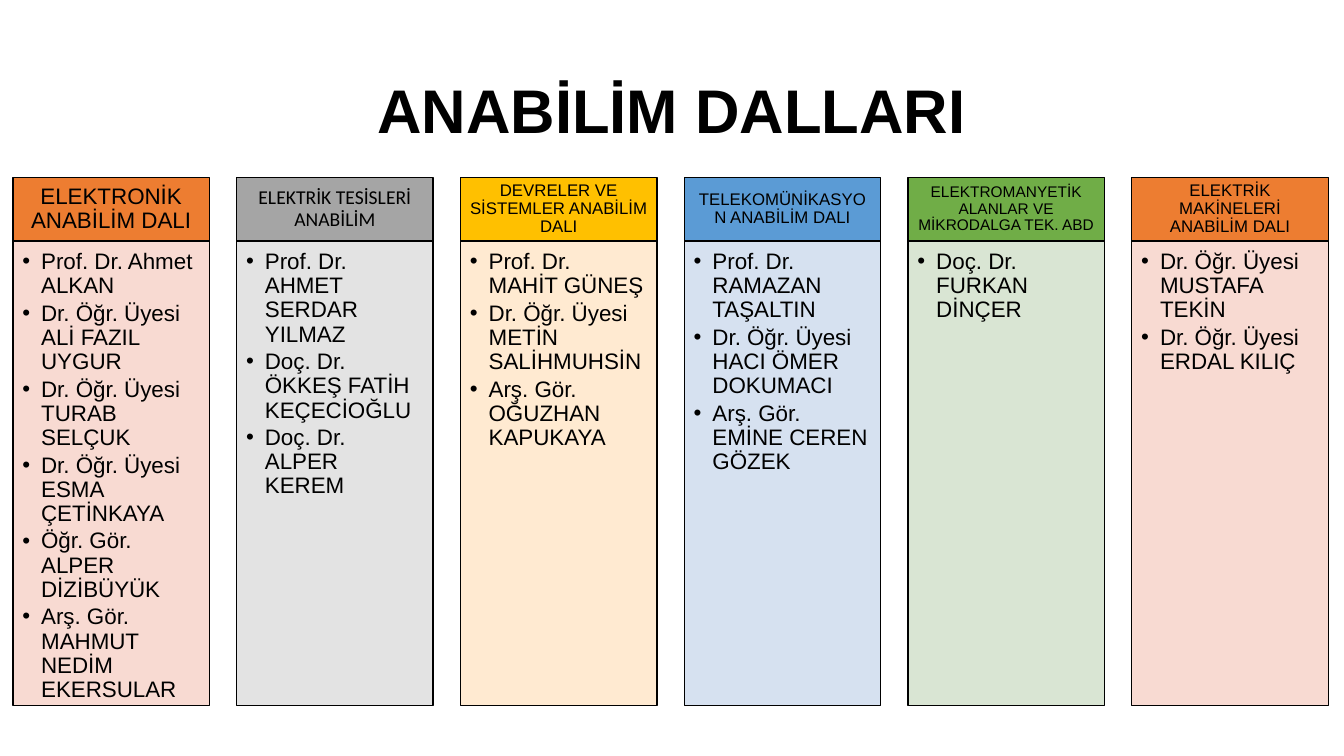
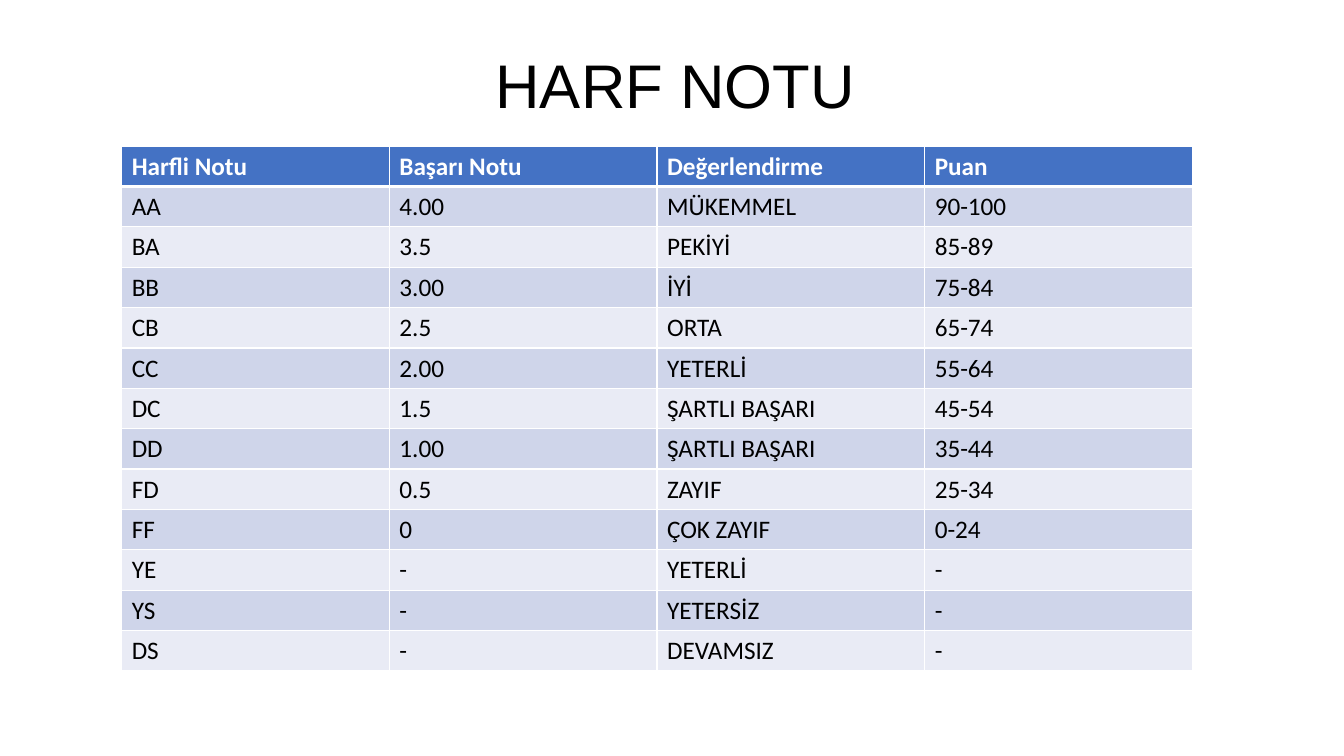
"""Build two slides: the department's divisions and the letter grade table."""
import pptx
import pptx.dml.color
import pptx.enum.shapes
import pptx.enum.text
import pptx.oxml
import pptx.oxml.ns
import pptx.util

Pt = pptx.util.Pt
ALIGN = pptx.enum.text.PP_ALIGN
ANCHOR = pptx.enum.text.MSO_ANCHOR
BLACK, WHITE = "000000", "FFFFFF"
NAMESPACE = pptx.oxml.ns.nsdecls("a")

TITLE_FRAME = {"word_wrap": True, "vertical_anchor": ANCHOR.MIDDLE}
CENTRED = {"alignment": ALIGN.CENTER, "line_spacing": 0.9}
BODY_FRAME = {"word_wrap": True, "vertical_anchor": ANCHOR.TOP, "margin_left": Pt(6.7),
              "margin_top": Pt(6.7), "margin_right": Pt(8.9), "margin_bottom": Pt(10)}
BODY_PARA = {"alignment": ALIGN.LEFT, "line_spacing": 0.9, "space_after": Pt(2.4)}

TITLES = [
    ("ANABİLİM DALLARI", True, (66, 28.8, 828, 104.4)),
    ("HARF NOTU", False, (86.4, 22.3, 792, 82)),
]

DIVISIONS = [
    ("ELEKTRONİK ANABİLİM DALI", "Arial", 16, "ED7D31", "F8D7CE", [
        "Prof. Dr. Ahmet ALKAN", "Dr. Öğr. Üyesi ALİ FAZIL UYGUR",
        "Dr. Öğr. Üyesi TURAB SELÇUK", "Dr. Öğr. Üyesi ESMA ÇETİNKAYA",
        "Öğr. Gör. ALPER DİZİBÜYÜK", "Arş. Gör. MAHMUT NEDİM EKERSULAR"]),
    ("ELEKTRİK TESİSLERİ ANABİLİM", "Calibri", 14, "A5A5A5", "E1E1E1", [
        "Prof. Dr. AHMET SERDAR YILMAZ", "Doç. Dr. ÖKKEŞ FATİH KEÇECİOĞLU",
        "Doç. Dr. ALPER KEREM"]),
    ("DEVRELER VE SİSTEMLER ANABİLİM DALI", "Arial", 12, "FFC000", "FFE8CC", [
        "Prof. Dr. MAHİT GÜNEŞ", "Dr. Öğr. Üyesi METİN SALİHMUHSİN",
        "Arş. Gör. OĞUZHAN KAPUKAYA"]),
    ("TELEKOMÜNİKASYON ANABİLİM DALI", "Arial", 12, "5B9BD5", "D2DEEF", [
        "Prof. Dr. RAMAZAN TAŞALTIN", "Dr. Öğr. Üyesi HACI ÖMER DOKUMACI",
        "Arş. Gör. EMİNE CEREN GÖZEK"]),
    ("ELEKTROMANYETİK ALANLAR VE MİKRODALGA TEK. ABD", "Arial", 11, "70AD47", "D5E3CF", [
        "Doç. Dr. FURKAN DİNÇER"]),
    ("ELEKTRİK MAKİNELERİ ANABİLİM DALI", "Arial", 12, "ED7D31", "F8D7CE", [
        "Dr. Öğr. Üyesi MUSTAFA TEKİN", "Dr. Öğr. Üyesi ERDAL KILIÇ"]),
]

GRADES = [
    ("Harfli Notu", "Başarı Notu", "Değerlendirme", "Puan"),
    ("AA", "4.00", "MÜKEMMEL", "90-100"),
    ("BA", "3.5", "PEKİYİ", "85-89"),
    ("BB", "3.00", "İYİ", "75-84"),
    ("CB", "2.5", "ORTA", "65-74"),
    ("CC", "2.00", "YETERLİ", "55-64"),
    ("DC", "1.5", "ŞARTLI BAŞARI", "45-54"),
    ("DD", "1.00", "ŞARTLI BAŞARI", "35-44"),
    ("FD", "0.5", "ZAYIF", "25-34"),
    ("FF", "0", "ÇOK ZAYIF", "0-24"),
    ("YE", "-", "YETERLİ", "-"),
    ("YS", "-", "YETERSİZ", "-"),
    ("DS", "-", "DEVAMSIZ", "-"),
]


def paint(target, value):
    """Give a fill or a font one solid colour."""
    if hasattr(target, "solid"):
        target.solid()
        target.fore_color.rgb = pptx.dml.color.RGBColor.from_string(value)
    else:
        target.color.rgb = pptx.dml.color.RGBColor.from_string(value)


def write(frame, lines, frame_format, para_format, font_format, ink=BLACK):
    """Fill a text frame with one formatted paragraph a line."""
    for name, value in frame_format.items():
        setattr(frame, name, value)
    for number, line in enumerate(lines):
        para = frame.add_paragraph() if number else frame.paragraphs[0]
        for name, value in para_format.items():
            setattr(para, name, value)
        span = para.add_run()
        span.text = line
        for name, value in font_format.items():
            setattr(span.font, name, value)
        paint(span.font, ink)


deck = pptx.Presentation()
deck.slide_width, deck.slide_height = Pt(960), Pt(540)

pages = []
for title, bold, place in TITLES:
    page = deck.slides.add_slide(deck.slide_layouts[6])
    box = page.shapes.add_textbox(*map(Pt, place))
    write(box.text_frame, [title], TITLE_FRAME, CENTRED,
          {"name": "Arial", "size": Pt(44), "bold": bold})
    pages.append(page)
divisions_page, grades_page = pages

for column, (heading, font, size, dark, light, staff) in enumerate(DIVISIONS):
    left = 9.2 + 159.84 * column
    boxes = []
    for top, height, fill in ((126.7, 45.4, dark), (172.1, 331.9, light)):
        box = divisions_page.shapes.add_shape(
            pptx.enum.shapes.MSO_SHAPE.RECTANGLE, Pt(left), Pt(top), Pt(140.4), Pt(height))
        box.shadow.inherit = False
        paint(box.fill, fill)
        paint(box.line.fill, BLACK)
        box.line.width = Pt(1)
        boxes.append(box)
    header, body = boxes

    side, edge = Pt(size * 0.54), Pt(size * 0.3)
    header_frame = {"word_wrap": True, "vertical_anchor": ANCHOR.MIDDLE, "margin_left": side,
                    "margin_right": side, "margin_top": edge, "margin_bottom": edge}
    write(header.text_frame, [heading], header_frame, CENTRED, {"name": font, "size": Pt(size)})

    write(body.text_frame, staff, BODY_FRAME, BODY_PARA, {"name": "Arial", "size": Pt(16)})
    shade = body.fill._xPr.find(".//" + pptx.oxml.ns.qn("a:srgbClr"))
    shade.append(pptx.oxml.parse_xml(f'<a:alpha {NAMESPACE} val="90000"/>'))
    for para in body.text_frame.paragraphs:
        props = para._p.get_or_add_pPr()
        props.set("marL", str(Pt(13.5)))
        props.set("indent", str(-Pt(13.5)))
        props.append(pptx.oxml.parse_xml(f'<a:buFont {NAMESPACE} typeface="Arial"/>'))
        props.append(pptx.oxml.parse_xml(f'<a:buChar {NAMESPACE} char="•"/>'))

table = grades_page.shapes.add_table(
    len(GRADES), len(GRADES[0]), Pt(86.9), Pt(104.4), Pt(764.8), Pt(374.4)).table
for row, values in enumerate(GRADES):
    fill = "4472C4" if row == 0 else ("E9EBF5", "CFD5EA")[row % 2]
    widths = {"L": 1, "R": 1, "T": 3 if row == 1 else 1, "B": 3 if row == 0 else 1}
    for column, value in enumerate(values):
        cell = table.cell(row, column)
        props = cell._tc.get_or_add_tcPr()
        for edge, width in widths.items():
            props.append(pptx.oxml.parse_xml(
                f'<a:ln{edge} {NAMESPACE} w="{Pt(width)}"><a:solidFill>'
                f'<a:srgbClr val="{WHITE}"/></a:solidFill></a:ln{edge}>'))
        paint(cell.fill, fill)
        write(cell.text_frame, [value], {}, {},
              {"name": "Calibri", "size": Pt(18), "bold": row == 0},
              BLACK if row else WHITE)

deck.save("out.pptx")
